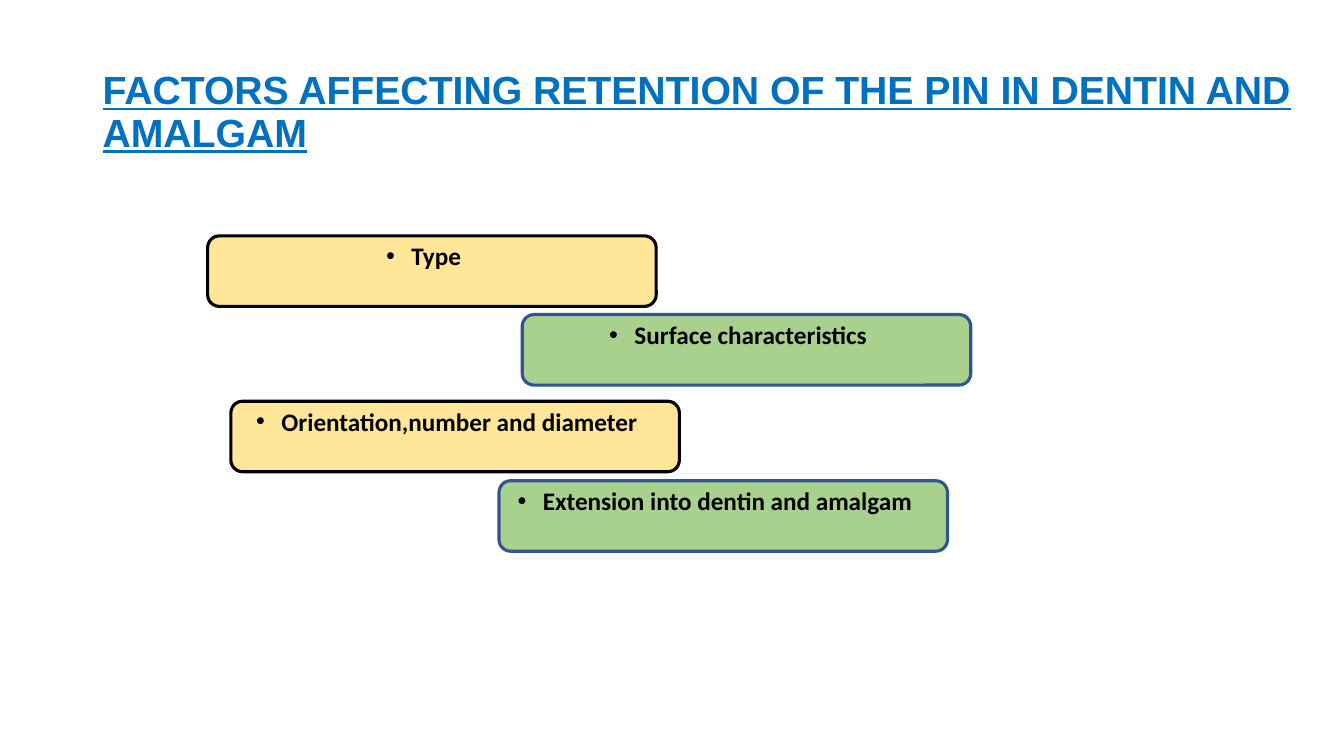
from pptx import Presentation
from pptx.dml.color import RGBColor as Rgb
from pptx.enum.shapes import MSO_SHAPE as Kind
from pptx.enum.text import MSO_ANCHOR as Anchor, PP_ALIGN as Align
from pptx.util import Pt
from lxml.etree import SubElement as Sub
from pptx.oxml.ns import qn

TITLE = "FACTORS AFFECTING RETENTION OF THE PIN IN DENTIN AND AMALGAM"
FACTORS = [
    ("Type", 148.3, 168.5),
    ("Surface characteristics", 373, 224.7),
    ("Orientation,number and diameter", 164.9, 286.6),
    ("Extension into dentin and amalgam", 356.4, 343.4),
]
BOX = (320.4, 50.4)
THEME = {
    "title": ("Arial", 28, "0070C0"),
    "label": ("Calibri", 18, "000000"),
    "boxes": [("FFE699", "000000"), ("A9D18E", "325491")],
    "line": 2.25,
    "indent": 18,
}


def style(para, role):
    name, size, color = THEME[role]
    font = para.font
    font.name, font.size, font.bold = name, Pt(size), True
    font.color.rgb = Rgb.from_string(color)


def bullet(para):
    props = para._p.get_or_add_pPr()
    gap = Pt(THEME["indent"])
    props.set("marL", str(gap))
    props.set("indent", str(-gap))
    mark = Sub(props, qn("a:buFont"))
    mark.set("typeface", "Arial")
    Sub(props, qn("a:buChar")).set("char", "•")


def add_title(slide):
    box = slide.shapes.add_textbox(Pt(66.2), Pt(28.8), Pt(864), Pt(104.4))
    frame = box.text_frame
    frame.word_wrap = True
    frame.vertical_anchor = Anchor.MIDDLE
    para = frame.paragraphs[0]
    para.text = TITLE
    para.line_spacing = 0.9
    style(para, "title")
    para.font.underline = True


def add_factor(slide, text, left, top, fill, line):
    box = slide.shapes.add_shape(
        Kind.ROUNDED_RECTANGLE, Pt(left), Pt(top), *map(Pt, BOX))
    box.shadow.inherit = False
    box.fill.solid()
    box.fill.fore_color.rgb = Rgb.from_string(fill)
    box.line.color.rgb = Rgb.from_string(line)
    box.line.width = Pt(THEME["line"])
    frame = box.text_frame
    frame.word_wrap = True
    frame.vertical_anchor = Anchor.TOP
    frame.margin_top = Pt(1)
    frame.margin_right = Pt(19)
    para = frame.paragraphs[0]
    para.text = text
    para.alignment = Align.CENTER
    bullet(para)
    style(para, "label")


def main():
    deck = Presentation()
    deck.slide_width, deck.slide_height = Pt(960), Pt(540)
    slide = deck.slides.add_slide(deck.slide_layouts[6])
    add_title(slide)
    for i, (text, left, top) in enumerate(FACTORS):
        fill, line = THEME["boxes"][i % 2]
        add_factor(slide, text, left, top, fill, line)
    deck.save("out.pptx")


if __name__ == "__main__":
    main()
